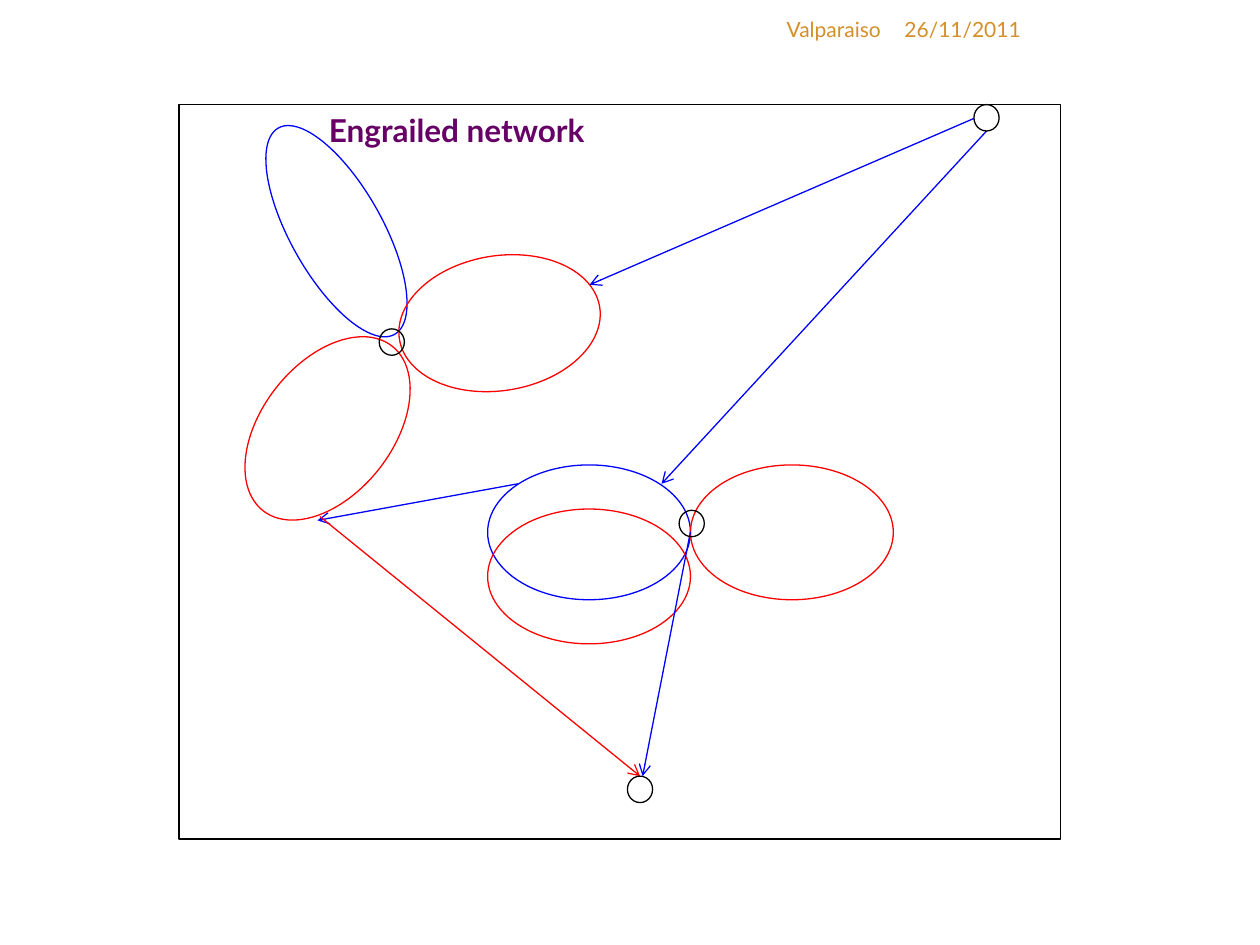
from dataclasses import dataclass

from pptx import Presentation
from pptx import util as u
from pptx.dml.color import RGBColor
from pptx.enum import shapes, text
from pptx.oxml.ns import qn
from lxml import etree

# The slide is a grid of 100 columns by 75 rows.
COLUMNS, ROWS = 100, 75
BLACK, BLUE, RED = "000000", "0000FF", "FF0000"
PURPLE, GOLD = "660066", "D48F29"
FONT = "Lato"
LINE_WIDTH = 0.75
NODE_SIZE = (2, 2.1)


@dataclass
class Lobe:
    left: float
    top: float
    colour: str
    width: float = 16.1
    height: float = 10.7
    rotation: float = 0


@dataclass
class Arrow:
    start: tuple[float, float]
    end: tuple[float, float]
    colour: str = BLUE


LOBES = [
    Lobe(38.7, 36.9, BLUE),
    Lobe(54.8, 36.9, RED),
    Lobe(38.7, 40.4, RED),
    Lobe(17.3, 14.7, BLUE, 18.8, 7.3, 60.6),
    Lobe(31.6, 20.3, RED, rotation=350.8),
    Lobe(17.7, 28.8, RED, 16.6, 10.4, 308.1),
]
ARROWS = [
    Arrow((41.1, 38.4), (25.2, 41.3)),
    Arrow((77.3, 9.4), (46.8, 22.6)),
    Arrow((78.3, 10.4), (52.5, 38.4)),
    Arrow((25.4, 41), (50.8, 61.6), RED),
    Arrow((54.8, 42.2), (51, 61.6)),
]
NODES = [(77.3, 8.3), (49.8, 61.6), (30.1, 26.1), (53.9, 40.5)]

deck = Presentation()
deck.slide_width, deck.slide_height = u.Inches(10), u.Inches(7.5)
page = deck.slides.add_slide(deck.slide_layouts[5])


def across(columns: float) -> int:
    return round(deck.slide_width * columns / COLUMNS)


def down(rows: float) -> int:
    return round(deck.slide_height * rows / ROWS)


def place(left: float, top: float, width: float, height: float) -> tuple[int, ...]:
    return across(left), down(top), across(width), down(height)


def rgb(colour: str) -> RGBColor:
    return RGBColor.from_string(colour)


def draw_outline(kind, area: tuple[int, ...], colour: str, rotation: float = 0) -> None:
    shape = page.shapes.add_shape(kind, *area)
    shape.shadow.inherit = False
    shape.fill.background()
    shape.line.color.rgb = rgb(colour)
    shape.line.width = u.Pt(LINE_WIDTH)
    shape.rotation = rotation


def draw_arrow(arrow: Arrow) -> None:
    (x1, y1), (x2, y2) = arrow.start, arrow.end
    connector = page.shapes.add_connector(
        shapes.MSO_CONNECTOR.STRAIGHT, across(x1), down(y1), across(x2), down(y2))
    connector.line.color.rgb = rgb(arrow.colour)
    connector.line.width = u.Pt(LINE_WIDTH)
    properties = connector._element.spPr
    etree.SubElement(properties.find(qn("a:ln")), qn("a:tailEnd"), type="arrow")
    etree.SubElement(properties, qn("a:effectLst"))


def write(box, words: str, *, size: float, colour: str, bold: bool = False,
          align=text.PP_ALIGN.LEFT, anchor=text.MSO_ANCHOR.TOP) -> None:
    frame = box.text_frame
    frame.word_wrap = True
    frame.auto_size = text.MSO_AUTO_SIZE.NONE
    frame.vertical_anchor = anchor
    para = frame.paragraphs[0]
    para.alignment = align
    span = para.add_run()
    span.text = words
    span.font.name = FONT
    span.font.size = u.Pt(size)
    span.font.bold = bold
    span.font.color.rgb = rgb(colour)


def main() -> None:
    draw_outline(shapes.MSO_SHAPE.RECTANGLE, place(14.2, 8.3, 70, 58.3), BLACK)
    for lobe in LOBES:
        draw_outline(shapes.MSO_SHAPE.OVAL,
                     place(lobe.left, lobe.top, lobe.width, lobe.height),
                     lobe.colour, lobe.rotation)
    for arrow in ARROWS:
        draw_arrow(arrow)
    for node in NODES:
        draw_outline(shapes.MSO_SHAPE.OVAL, place(*node, *NODE_SIZE), BLACK)

    title = page.shapes.title
    title.left, title.top, title.width, title.height = place(25.1, 8.3, 40, 4)
    write(title, "Engrailed network", size=18, colour=PURPLE, bold=True,
          anchor=text.MSO_ANCHOR.MIDDLE)
    venue = page.shapes.add_textbox(*place(34.2, 0.8, 36.7, 3.2))
    write(venue, "Valparaiso", size=12, colour=GOLD, align=text.PP_ALIGN.RIGHT)
    date = page.shapes.add_textbox(*place(70.8, 0.8, 27.5, 3.2))
    write(date, "26/11/2011", size=12, colour=GOLD)

    deck.save("out.pptx")


if __name__ == "__main__":
    main()
